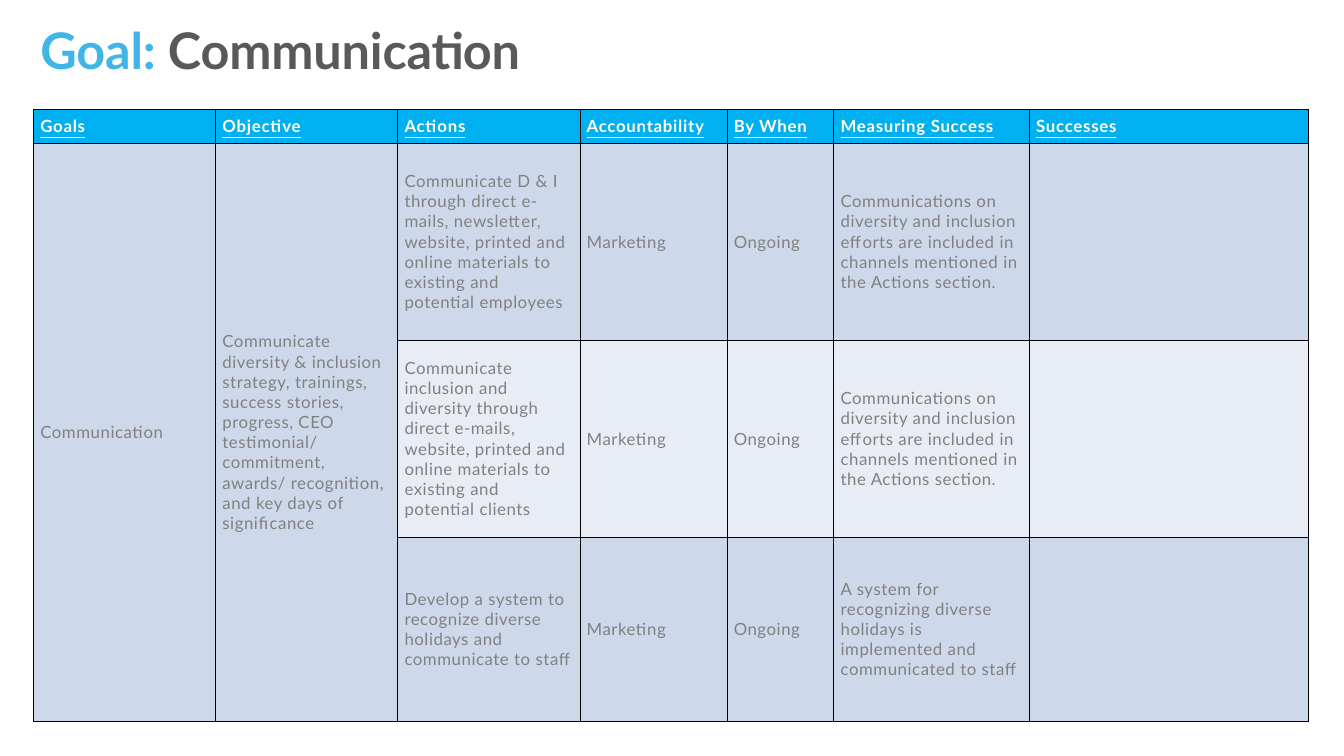
from lxml.etree import SubElement
from pptx import Presentation
from pptx.dml.color import RGBColor
from pptx.enum.text import MSO_ANCHOR, MSO_AUTO_SIZE
from pptx.oxml.ns import qn
from pptx.util import Emu, Pt

EMU_PER_PX = 9144
HEADER_FILL = "00B0F0"
BAND_FILLS = ["CDD9EA", "E8EDF5"]
COLUMN_WIDTHS = [271, 271, 271, 219, 159, 291, 415]
ROW_HEIGHTS = [35, 293, 293, 274]
HEADINGS = ["Goals", "Objective", "Actions", "Accountability", "By When",
            "Measuring Success", "Successes"]
GOAL = "Communication"
OBJECTIVE = ("Communicate diversity & inclusion strategy, trainings, success stories, "
             "progress, CEO testimonial/ commitment, awards/ recognition, "
             "and key days of significance")
CHANNEL_MEASURE = ("Communications on diversity and inclusion efforts are included "
                   "in channels mentioned in the Actions section.")
ACTIONS = [
    ("Communicate D & I through direct e-mails, newsletter, website, printed and "
     "online materials to existing and potential employees", CHANNEL_MEASURE),
    ("Communicate inclusion and diversity through direct e-mails, website, printed "
     "and online materials to existing and potential clients", CHANNEL_MEASURE),
    ("Develop a system to recognize diverse holidays and communicate to staff",
     "A system for recognizing diverse holidays is implemented and communicated to staff"),
]


def px(length):
    return Emu(length * EMU_PER_PX)


def color(value):
    return RGBColor.from_string(value)


def add_text(para, text, size=18, fill="808080", bold=False, underline=False, spacing=60):
    para.line_spacing = Pt(size * 1.2)
    span = para.add_run()
    span.text = text
    span.font.name = "Lato"
    span.font.size = Pt(size)
    span.font.bold = bold
    span.font.underline = underline
    span.font.color.rgb = color(fill)
    span.font._element.set("spc", str(spacing))


def add_title(page):
    box = page.shapes.add_textbox(px(60), px(28), px(1689), px(110))
    frame = box.text_frame
    frame.word_wrap = True
    frame.auto_size = MSO_AUTO_SIZE.SHAPE_TO_FIT_TEXT
    frame.margin_left = frame.margin_right = frame.margin_top = frame.margin_bottom = 0
    para = frame.paragraphs[0]
    for text, fill in [("Goal: ", "41B6E6"), (GOAL, "595959")]:
        add_text(para, text, size=54, fill=fill, bold=True, spacing=-20)


def add_borders(cell):
    properties = cell._tc.get_or_add_tcPr()
    for side in ("lnL", "lnR", "lnT", "lnB"):
        line = SubElement(properties, qn(f"a:{side}"), w=str(Pt(1)))
        fill = SubElement(line, qn("a:solidFill"))
        SubElement(fill, qn("a:srgbClr"), val="000000")


def style_cell(cell, fill):
    cell.vertical_anchor = MSO_ANCHOR.MIDDLE
    cell.margin_left = cell.margin_right = cell.margin_top = cell.margin_bottom = px(10)
    add_borders(cell)
    cell.fill.solid()
    cell.fill.fore_color.rgb = color(fill)


def add_plan_table(page):
    rows = [HEADINGS]
    for action, measure in ACTIONS:
        rows.append(["", "", action, "Marketing", "Ongoing", measure, ""])
    rows[1][:2] = [GOAL, OBJECTIVE]

    table = page.shapes.add_table(
        len(rows), len(HEADINGS), px(50), px(163),
        px(sum(COLUMN_WIDTHS)), px(sum(ROW_HEIGHTS))).table
    for column, width in zip(table.columns, COLUMN_WIDTHS):
        column.width = px(width)
    for row, height in zip(table.rows, ROW_HEIGHTS):
        row.height = px(height)

    heading_format = dict(fill="FFFFFF", bold=True, underline=True, spacing=80)
    for row_index, texts in enumerate(rows):
        is_header = row_index == 0
        fill = HEADER_FILL if is_header else BAND_FILLS[(row_index - 1) % 2]
        for column_index, text in enumerate(texts):
            cell = table.cell(row_index, column_index)
            style_cell(cell, fill)
            if text:
                text_format = heading_format if is_header else {}
                add_text(cell.text_frame.paragraphs[0], text, **text_format)

    for column_index in range(2):
        table.cell(1, column_index).merge(table.cell(len(ACTIONS), column_index))


def main():
    deck = Presentation()
    deck.slide_width = px(2000)
    deck.slide_height = px(1125)
    page = deck.slides.add_slide(deck.slide_layouts[6])
    add_title(page)
    add_plan_table(page)
    deck.save("out.pptx")


if __name__ == "__main__":
    main()
